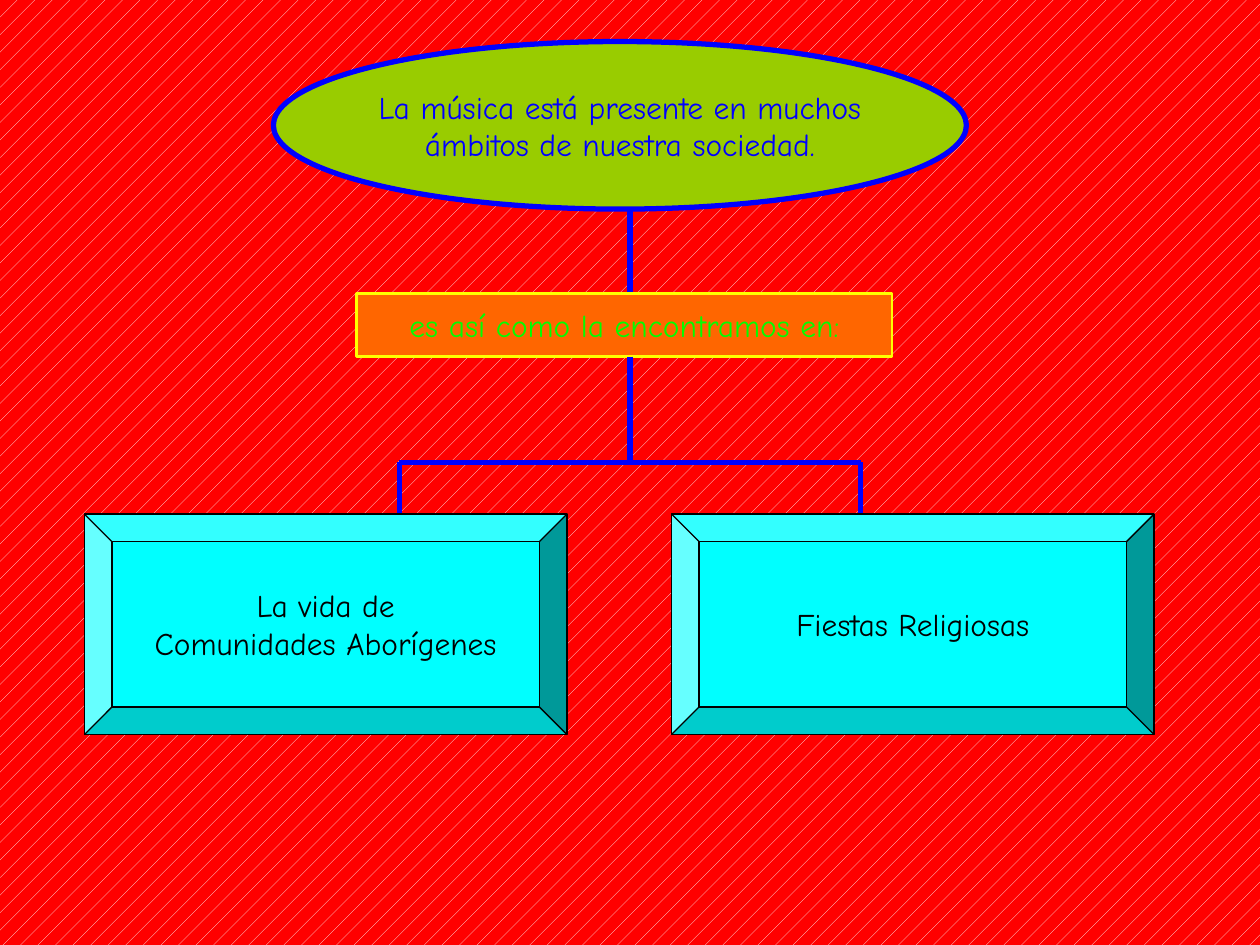
import pptx
import pptx.dml.color
import pptx.enum.dml
import pptx.enum.shapes
import pptx.enum.text
import pptx.oxml
import pptx.util
from pptx.util import Inches

SHAPE = pptx.enum.shapes.MSO_SHAPE
BLUE = "0000FF"
BLACK = "000000"


def color(value):
    return pptx.dml.color.RGBColor.from_string(value)


class ConceptMap:
    font = "Comic Neue"
    size = 18
    link_width = 3

    def __init__(self, slide):
        self.slide = slide

    def background(self, fore, back):
        fill = self.slide.background.fill
        fill.patterned()
        fill.pattern = pptx.enum.dml.MSO_PATTERN.PERCENT_5
        fill.fore_color.rgb = color(fore)
        fill.back_color.rgb = color(back)

    def node(self, kind, box, lines, fill, line, width, text_color):
        sp = self.slide.shapes.add_shape(kind, *[Inches(v) for v in box])
        sp.shadow.inherit = False
        sp.fill.solid()
        sp.fill.fore_color.rgb = color(fill)
        sp.line.color.rgb = color(line)
        sp.line.width = pptx.util.Pt(width)
        tf = sp.text_frame
        tf.word_wrap = False
        tf.vertical_anchor = pptx.enum.text.MSO_ANCHOR.MIDDLE
        for i, text in enumerate(lines):
            p = tf.add_paragraph() if i else tf.paragraphs[0]
            p.alignment = pptx.enum.text.PP_ALIGN.CENTER
            r = p.add_run()
            r.text = text
            r.font.name = self.font
            r.font.size = pptx.util.Pt(self.size)
            r.font.color.rgb = color(text_color)
        return sp

    def link(self, x1, y1, x2, y2):
        cn = self.slide.shapes.add_connector(
            pptx.enum.shapes.MSO_CONNECTOR.STRAIGHT,
            Inches(x1), Inches(y1), Inches(x2), Inches(y2))
        cn.line.color.rgb = color(BLUE)
        cn.line.width = pptx.util.Pt(self.link_width)
        cn._element.spPr.append(pptx.oxml.parse_xml(
            '<a:effectLst xmlns:a='
            '"http://schemas.openxmlformats.org/drawingml/2006/main"/>'))


def main():
    prs = pptx.Presentation()
    prs.slide_width, prs.slide_height = Inches(10), Inches(7.5)
    chart = ConceptMap(prs.slides.add_slide(prs.slide_layouts[6]))
    chart.background("FFFFFF", "FF0000")

    center, left, right = 5, 3.17, 6.83
    fork, boxes_top = 3.67, 4.08

    # Main idea and linking phrase
    chart.node(SHAPE.OVAL, (2.17, 0.33, 5.5, 1.33),
               ["La música está presente en muchos",
                "ámbitos de nuestra sociedad."],
               "99CC00", BLUE, 3, BLUE)
    chart.link(center, 1.67, center, 2.33)
    chart.node(SHAPE.RECTANGLE, (2.83, 2.33, 4.25, 0.5),
               ["es así como la encontramos en:"],
               "FF6600", "FFFF00", 1.5, "00FF00")

    # Fork to the two branches
    chart.link(center, 2.83, center, fork)
    chart.link(left, fork, right, fork)
    for x in (left, right):
        chart.link(x, fork, x, boxes_top)

    # Branches
    branches = [(0.67, ["La vida de", "Comunidades Aborígenes"]),
                (5.33, ["Fiestas Religiosas"])]
    for x, lines in branches:
        sp = chart.node(SHAPE.BEVEL, (x, boxes_top, 3.83, 1.75), lines,
                        "00FFFF", BLACK, 0.75, BLACK)
        sp.adjustments[0] = 0.125

    prs.save("out.pptx")


if __name__ == "__main__":
    main()
